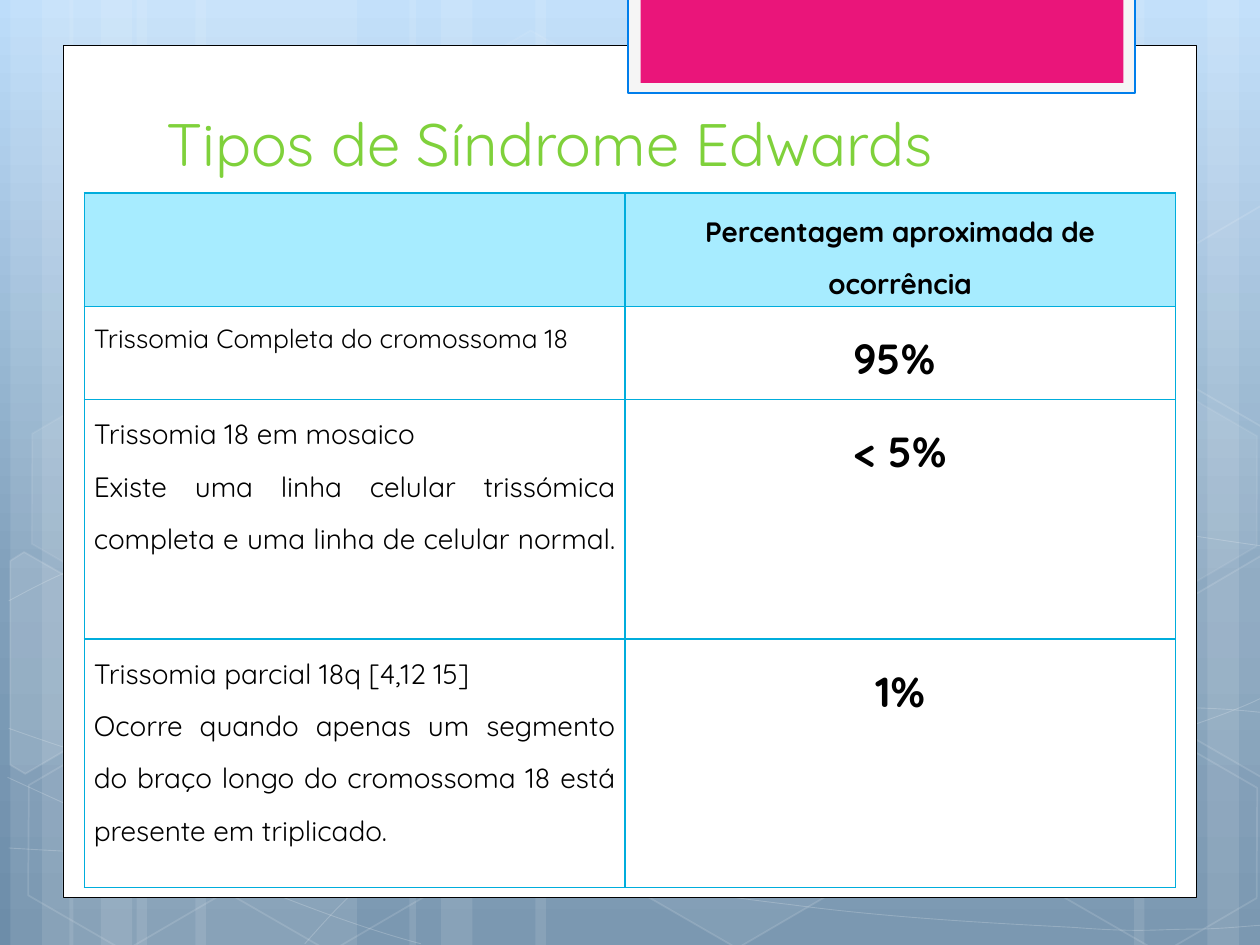
import math
from copy import deepcopy
from typing import NamedTuple, Optional

from lxml import etree
from pptx import Presentation
from pptx.dml.color import RGBColor
from pptx.enum import shapes, text
from pptx.oxml import ns
from pptx.util import Pt

WHITE = RGBColor(0xFF, 0xFF, 0xFF)
BLACK = RGBColor(0x00, 0x00, 0x00)
MIST = RGBColor(0xF5, 0xF5, 0xF5)
BLUE = RGBColor(0x00, 0x7E, 0xEB)
PINK = RGBColor(0xEA, 0x15, 0x7A)
GREEN = RGBColor(0x7F, 0xD1, 0x3B)
GRID = RGBColor(0x00, 0xAD, 0xDC)
HEADER = RGBColor(0x51, 0xDA, 0xFF)
SKY = ((0, RGBColor(0xBD, 0xDD, 0xFA)), (0.62, RGBColor(0x81, 0xA0, 0xBB)),
       (1, RGBColor(0x6D, 0x8D, 0xA9)))
FONT = "Quicksand"
WIDTH, HEIGHT = 720, 540
TILT = 30


class Paint(NamedTuple):
    color: RGBColor
    opacity: int = 100
    width: float = 1


class Hexagon(NamedTuple):
    left: float
    top: float
    fill_opacity: int
    line_opacity: int


class CutHexagon(NamedTuple):
    """A tilted hexagon cut off by the slide edge, with its corners as seen."""
    center: tuple
    corners: tuple
    fill_opacity: int


class Line(NamedTuple):
    words: str
    size: float


class Row(NamedTuple):
    height: float
    kind: tuple
    share: Line


STRIPE_TRIO = ((78, 126), (6, 36), (24, 60))
STRIPES = [(left + shift, width) for shift in (0, 33.6) for left, width in STRIPE_TRIO]
STRIPES += [(528, 126), (690, 36), (648, 60), (306, 222), (234, 36), (252, 60)]

# Each wave is a start point followed by triples of Bezier points.
WAVES = (
    ((5, 484.6), (44, 487), (83, 489), (137, 488), (191, 487), (258, 486), (330, 479),
     (402, 472), (504, 458), (570, 444), (636, 431), (703, 409), (725, 396.7)),
    ((5, 343.4), (26, 332), (47, 321), (87, 310), (128, 300), (186, 284), (250, 279),
     (314, 274), (387, 273), (471, 279), (550, 284), (682, 307), (725, 312.5)),
    ((4.3, 444.2), (91, 484), (178, 523), (240.5, 539.3)),
    ((5, 416.2), (27, 424), (50, 432), (92, 443.5), (134, 454), (197, 472), (257, 484.6),
     (317, 497), (392, 510), (452, 517), (512, 525), (576, 528), (614, 530),
     (652, 533), (662, 531), (680, 531), (699, 531), (713, 529), (725, 528.5)),
    ((174.2, 539.3), (187, 525), (200, 510), (217, 497.5), (235, 485), (259, 470),
     (279, 460), (300, 450), (312, 446), (338, 438.5), (364, 431), (412, 421),
     (438, 416), (464, 411), (467, 411), (490, 410), (512, 407), (547, 405), (572, 404.6),
     (597, 404), (638, 404.6), (638, 404.6), (654, 404.6), (670, 404.6), (686, 404.6),
     (699, 405), (711, 406), (724.3, 407.5)),
)
HEXAGONS = (
    Hexagon(240.5, 26, 4, 8), Hexagon(358, 424, 6, 12), Hexagon(8, 425.5, 0, 12),
    Hexagon(10, 224.6, 7, 8), Hexagon(125.3, 426, 0, 12), Hexagon(542, 326, 10, 12),
    Hexagon(600.5, 427, 0, 12), Hexagon(600.5, 226, 7, 8),
)
CUT_HEXAGONS = (
    CutHexagon((25.9, 385.2), ((5.8, 320.4), (13.7, 315.4), (69.1, 347), (68.4, 410.4),
                               (14.4, 442.1), (5.8, 437)), 10),
    CutHexagon((709.2, 374.4), ((666.7, 349.2), (720.7, 317.5), (726.5, 321.1),
                                (726.5, 441.4), (721.4, 444.2), (666.7, 412.6)), 4),
    CutHexagon((709.2, 173.5), ((666.7, 149), (720.7, 117.4), (727.2, 121),
                                (726.5, 241.2), (721.4, 244.1), (666.7, 212.4)), 0),
)
COLUMNS = (308.9, 314.6)
TABLE_HEIGHT = 398.2
ROWS = (
    Row(64.8, (), Line("Percentagem aproximada de ocorrência", 16)),
    Row(53.3, (Line("Trissomia Completa do cromossoma 18", 15),), Line("95% ", 24)),
    Row(136.8, (Line("Trissomia 18 em mosaico ", 16),
                Line("Existe uma linha celular trissómica completa e uma linha "
                     "de celular normal. ", 16)), Line("< 5%", 24)),
    Row(142.2, (Line("Trissomia parcial 18q [4,12 15]", 16),
                Line("Ocorre quando apenas um segmento do braço longo do cromossoma 18 "
                     "está presente em triplicado.", 16)), Line("1%", 24)),
)


def set_color(fill, paint: Paint) -> None:
    fill.solid()
    fill.fore_color.rgb = paint.color
    if paint.opacity < 100:
        color = fill._xPr.find(".//" + ns.qn("a:srgbClr"))
        etree.SubElement(color, ns.qn("a:alpha"), val=str(paint.opacity * 1000))


def style(shape, fill: Optional[Paint] = None, line: Optional[Paint] = None) -> None:
    shape.shadow.inherit = False
    if fill and fill.opacity:
        set_color(shape.fill, fill)
    else:
        shape.fill.background()
    if line:
        set_color(shape.line.fill, line)
        shape.line.width = Pt(line.width)
    else:
        shape.line.fill.background()


def add_preset(slide, preset, left: float, top: float, width: float, height: float,
               fill: Optional[Paint] = None, line: Optional[Paint] = None):
    shape = slide.shapes.add_shape(preset, Pt(left), Pt(top), Pt(width), Pt(height))
    style(shape, fill, line)
    return shape


def add_outline(slide, points, closed: bool, fill: Optional[Paint], line: Paint):
    start, *rest = [(Pt(x), Pt(y)) for x, y in points]
    builder = slide.shapes.build_freeform(*start)
    builder.add_line_segments(rest, close=closed)
    shape = builder.convert_to_shape()
    style(shape, fill, line)
    return shape


def add_wave(slide, wave) -> None:
    """Draw a chain of Bezier curves, joining each three points into one curve."""
    outline = add_outline(slide, wave, False, None, Paint(WHITE, 20, 0.5))
    steps = outline._element.findall(".//" + ns.qn("a:lnTo"))
    for i in range(0, len(steps), 3):
        curve = etree.SubElement(steps[i].getparent(), ns.qn("a:cubicBezTo"))
        for step in steps[i:i + 3]:
            curve.append(step[0])
            step.getparent().remove(step)


def add_cut_hexagon(slide, item: CutHexagon) -> None:
    cos, sin = math.cos(math.radians(TILT)), math.sin(math.radians(TILT))
    cx, cy = item.center
    level = [(cx + (x - cx) * cos + (y - cy) * sin, cy - (x - cx) * sin + (y - cy) * cos)
             for x, y in item.corners]
    add_outline(slide, level, True, Paint(WHITE, item.fill_opacity),
                Paint(WHITE, 12)).rotation = TILT


def paint_background(slide) -> None:
    fill = slide.background.fill
    fill.gradient()
    fill.gradient_angle = 270
    stops = slide._element.find(".//" + ns.qn("a:gsLst"))
    stops.append(deepcopy(stops[-1]))
    for stop, (position, color) in zip(fill.gradient_stops, SKY):
        stop.position = position
        stop.color.rgb = color


def add_decoration(slide) -> None:
    rectangle = shapes.MSO_SHAPE.RECTANGLE
    for left, width in STRIPES:
        add_preset(slide, rectangle, left, 0, width, HEIGHT, Paint(WHITE, 10))
    for wave in WAVES:
        add_wave(slide, wave)
    for item in HEXAGONS:
        hexagon = add_preset(slide, shapes.MSO_SHAPE.HEXAGON, item.left, item.top, 126, 109.4,
                             Paint(WHITE, item.fill_opacity), Paint(WHITE, item.line_opacity))
        hexagon.adjustments[0] = 0.285
        hexagon.rotation = TILT
    for item in CUT_HEXAGONS:
        add_cut_hexagon(slide, item)
    add_preset(slide, rectangle, 36, 26, 648, 487, Paint(WHITE), Paint(BLACK, width=0.5))
    add_preset(slide, rectangle, 359, -1.4, 289.6, 54.7, Paint(MIST), Paint(BLUE, width=1.25))
    add_preset(slide, rectangle, 366, -1.4, 276, 48.8, Paint(PINK))


def write(paragraph, line: Line, color: RGBColor, bold: bool) -> None:
    paragraph.text = line.words
    font = paragraph.runs[0].font
    font.name, font.size, font.bold = FONT, Pt(line.size), bold
    font.color.rgb = color


def add_title(slide) -> None:
    frame = slide.shapes.add_textbox(Pt(88), Pt(66.2), Pt(522.7), Pt(39.6)).text_frame
    frame.word_wrap = True
    frame.vertical_anchor = text.MSO_ANCHOR.BOTTOM
    write(frame.paragraphs[0], Line("Tipos de Síndrome Edwards", 34.2), GREEN, False)


def add_borders(cell) -> None:
    properties = cell._tc.get_or_add_tcPr()
    for i, side in enumerate(("lnL", "lnR", "lnT", "lnB")):
        border = etree.Element(ns.qn(f"a:{side}"), w=str(Pt(1)))
        solid = etree.SubElement(border, ns.qn("a:solidFill"))
        etree.SubElement(solid, ns.qn("a:srgbClr"), val=str(GRID))
        properties.insert(i, border)


def fill_cell(cell, lines, alignment, bold: bool, header: bool) -> None:
    cell.margin_left = cell.margin_right = Pt(5.4)
    cell.margin_top = cell.margin_bottom = 0
    cell.vertical_anchor = text.MSO_ANCHOR.MIDDLE if header else text.MSO_ANCHOR.TOP
    if header:
        set_color(cell.fill, Paint(HEADER, 50))
    else:
        cell.fill.background()
    add_borders(cell)
    for i, line in enumerate(lines):
        frame = cell.text_frame
        paragraph = frame.add_paragraph() if i else frame.paragraphs[0]
        paragraph.alignment = alignment
        paragraph.line_spacing = 1.5
        write(paragraph, line, BLACK, bold)


def add_types_table(slide) -> None:
    table = slide.shapes.add_table(len(ROWS), len(COLUMNS), Pt(48.2), Pt(110.2),
                                   Pt(sum(COLUMNS)), Pt(TABLE_HEIGHT)).table
    table.first_row = table.horz_banding = False
    for column, width in zip(table.columns, COLUMNS):
        column.width = Pt(width)
    for i, row in enumerate(ROWS):
        table.rows[i].height = Pt(row.height)
        fill_cell(table.cell(i, 0), row.kind, text.PP_ALIGN.JUSTIFY, False, i == 0)
        fill_cell(table.cell(i, 1), (row.share,), text.PP_ALIGN.CENTER, True, i == 0)


def main() -> None:
    deck = Presentation()
    deck.slide_width, deck.slide_height = Pt(WIDTH), Pt(HEIGHT)
    slide = deck.slides.add_slide(deck.slide_layouts[6])
    paint_background(slide)
    add_decoration(slide)
    add_title(slide)
    add_types_table(slide)
    deck.save("out.pptx")


if __name__ == "__main__":
    main()
